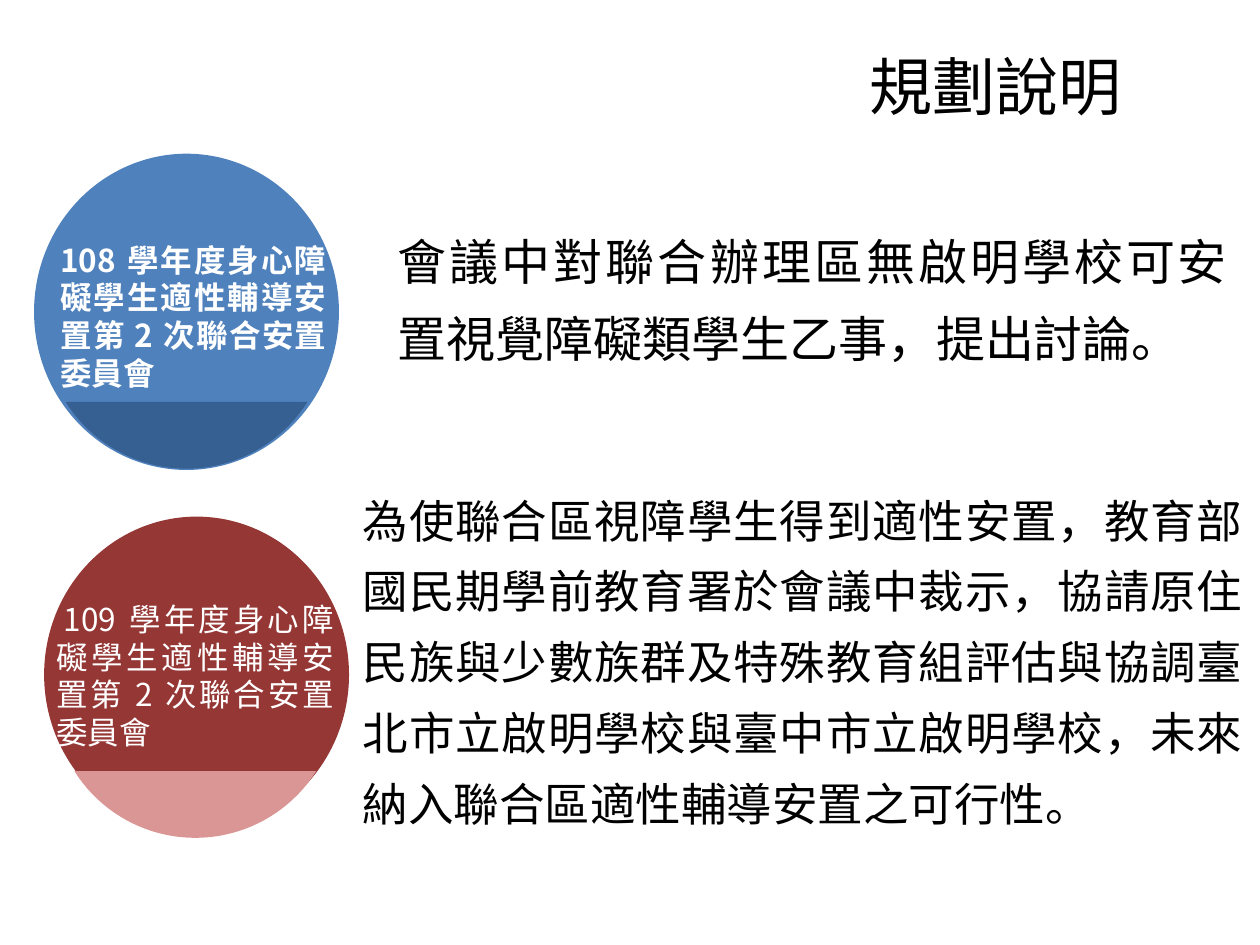
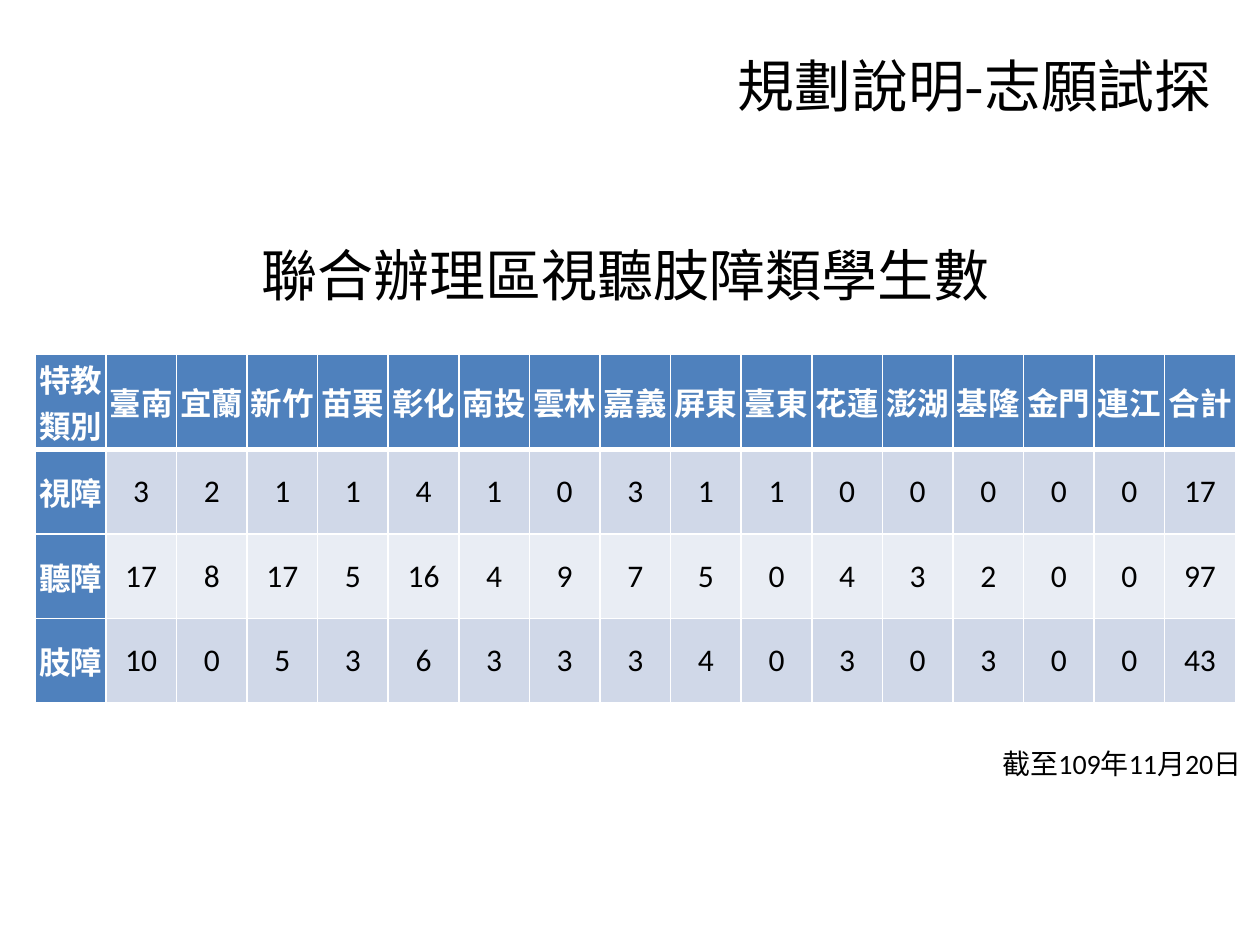
"""Build two slides on the placement planning of students with disabilities."""
import math

from lxml.etree import SubElement
from pptx import Presentation
from pptx.dml.color import RGBColor
from pptx.enum.shapes import MSO_SHAPE
from pptx.enum.text import MSO_ANCHOR, MSO_AUTO_SIZE, PP_ALIGN
from pptx.oxml.ns import qn
from pptx.util import Inches, Pt

CENTER, RIGHT, JUSTIFY = PP_ALIGN.CENTER, PP_ALIGN.RIGHT, PP_ALIGN.JUSTIFY
TOP, MIDDLE = MSO_ANCHOR.TOP, MSO_ANCHOR.MIDDLE
FIT, NO_FIT = MSO_AUTO_SIZE.SHAPE_TO_FIT_TEXT, MSO_AUTO_SIZE.NONE
ELLIPSE = MSO_SHAPE.OVAL
CJK, LATIN = "Noto Sans CJK SC", "Calibri"
TITLE_ONLY = 5

COLORS = {
    "black": "000000", "white": "FFFFFF",
    "blue": "4F81BD", "dark_blue": "376092",
    "red": "953735", "pink": "D99694",
    "band": "D0D8E8", "light_band": "E9EDF4",
}

DISTRICTS = ("臺南 宜蘭 新竹 苗栗 彰化 南投 雲林 嘉義 屏東 "
             "臺東 花蓮 澎湖 基隆 金門 連江").split()
STUDENTS = {
    "視障": [3, 2, 1, 1, 4, 1, 0, 3, 1, 1, 0, 0, 0, 0, 0],
    "聽障": [17, 8, 17, 5, 16, 4, 9, 7, 5, 0, 4, 3, 2, 0, 0],
    "肢障": [10, 0, 5, 3, 6, 3, 3, 3, 4, 0, 3, 0, 3, 0, 0],
}


class Deck:
    """Hold the shared style and the slide being built."""

    def __init__(self):
        self.prs = Presentation()
        self.prs.slide_width, self.prs.slide_height = Inches(10), Inches(7.5)
        self.s = None

    def color(self, name):
        return RGBColor.from_string(COLORS[name])

    def set_text(self, tf, text, size, font=CJK, color="black", bold=False,
                 align=CENTER, spacing=None, indent=0):
        p = tf.paragraphs[0]
        p.text = text
        p.alignment = align
        if spacing:
            p.line_spacing = spacing
        if indent:
            p._p.get_or_add_pPr().set("indent", str(Inches(indent)))
        p.font.size, p.font.bold = Pt(size), bold
        p.font.color.rgb = self.color(color)
        p.font.name = font
        SubElement(p.font._rPr, qn("a:ea"), typeface=CJK)

    def slide(self, title, left, width, size):
        self.s = self.prs.slides.add_slide(self.prs.slide_layouts[TITLE_ONLY])
        sp = self.s.shapes.title
        sp.left, sp.top = Inches(left), Inches(0.21)
        sp.width, sp.height = Inches(width), Inches(0.93)
        tf = sp.text_frame
        tf.vertical_anchor, tf.auto_size = MIDDLE, NO_FIT
        self.set_text(tf, title, size)

    def text(self, box, text, size, anchor=TOP, **style):
        tf = self.s.shapes.add_textbox(*map(Inches, box)).text_frame
        tf.word_wrap, tf.auto_size = True, FIT
        tf.vertical_anchor = anchor
        self.set_text(tf, text, size, **style)

    def paint(self, sp, color):
        sp.shadow.inherit = False
        sp.fill.solid()
        sp.fill.fore_color.rgb = self.color(color)
        sp.line.fill.background()

    def circle(self, left, top, color):
        sp = self.s.shapes.add_shape(
            ELLIPSE, Inches(left), Inches(top), Inches(2.42), Inches(2.51))
        self.paint(sp, color)

    def segment(self, left, top, color, width=1.92, height=0.53, steps=40):
        half = width / 2
        radius = (half ** 2 + height ** 2) / (2 * height)
        sweep = math.asin(half / radius)
        angles = [sweep * (1 - 2 * i / steps) for i in range(steps + 1)]
        points = [(Inches(left + half + radius * math.sin(a)),
                   Inches(top + height - radius * (1 - math.cos(a))))
                  for a in angles]
        fb = self.s.shapes.build_freeform(*points[-1])
        fb.add_line_segments(points[:-1], close=True)
        self.paint(fb.convert_to_shape(), color)

    def borders(self, cell, bottom):
        tcPr = cell._tc.get_or_add_tcPr()
        for side, width in (("L", 1), ("R", 1), ("T", 1), ("B", bottom)):
            ln = SubElement(tcPr, qn(f"a:ln{side}"), w=str(Pt(width)))
            fill = SubElement(ln, qn("a:solidFill"))
            SubElement(fill, qn("a:srgbClr"), val=COLORS["white"])

    def table(self, box, rows, heights):
        tbl = self.s.shapes.add_table(
            len(rows), len(rows[0]), *map(Inches, box)).table
        for col in tbl.columns:
            col.width = Inches(box[2] / len(rows[0]))
        for r, (row, height) in enumerate(zip(rows, heights)):
            tbl.rows[r].height = Inches(height)
            for c, value in enumerate(row):
                cell = tbl.cell(r, c)
                head = r == 0 or c == 0
                self.borders(cell, 3 if r == 0 else 1)
                cell.fill.solid()
                cell.fill.fore_color.rgb = self.color(
                    "blue" if head else "band" if r % 2 else "light_band")
                cell.margin_left = cell.margin_right = Inches(0.02)
                cell.margin_top = cell.margin_bottom = 0
                cell.vertical_anchor = MIDDLE
                self.set_text(cell.text_frame, str(value), 18, LATIN,
                              "white" if head else "black", head)


def meeting_slide(deck):
    deck.slide("規劃說明", 5.87, 4.06, 36)
    meeting = "學年度身心障礙學生適性輔導安置第 2 次聯合安置委員會"
    label = dict(size=18, anchor=MIDDLE, color="white", align=JUSTIFY)
    deck.circle(0.35, 4.1, "red")
    deck.segment(0.59, 6.12, "pink")
    deck.text((0.35, 4.7, 2.4, 1.32), f"109 {meeting}", indent=0.06, **label)
    deck.circle(0.27, 1.22, "blue")
    deck.segment(0.52, 3.19, "dark_blue")
    deck.text((0.38, 1.85, 2.31, 1.32), f"108 {meeting}", bold=True, **label)
    body = dict(align=JUSTIFY, spacing=1.3)
    deck.text((2.78, 3.73, 7.19, 2.95),
              "為使聯合區視障學生得到適性安置，教育部國民期學前教育署於會議中裁示，"
              "協請原住民族與少數族群及特殊教育組評估與協調臺北市立啟明學校與"
              "臺中市立啟明學校，未來納入聯合區適性輔導安置之可行性。", 26, **body)
    deck.text((3.06, 1.65, 6.78, 1.27),
              "會議中對聯合辦理區無啟明學校可安置視覺障礙類學生乙事，提出討論。",
              28, **body)


def student_slide(deck):
    deck.slide("規劃說明-志願試探", 5.55, 4.37, 32.4)
    deck.text((0.12, 1.86, 9.69, 0.64), "聯合辦理區視聽肢障類學生數", 32,
              font=LATIN)
    deck.text((7.83, 5.88, 2.12, 0.37), "截至109年11月20日", 16,
              font=LATIN, align=RIGHT)
    rows = [["特教類別", *DISTRICTS, "合計"]]
    rows += [[kind, *counts, sum(counts)] for kind, counts in STUDENTS.items()]
    deck.table((0.28, 2.81, 9.53, 2.77), rows, [0.76] + [0.67] * 3)


def main():
    deck = Deck()
    meeting_slide(deck)
    student_slide(deck)
    deck.prs.save("out.pptx")


if __name__ == "__main__":
    main()
